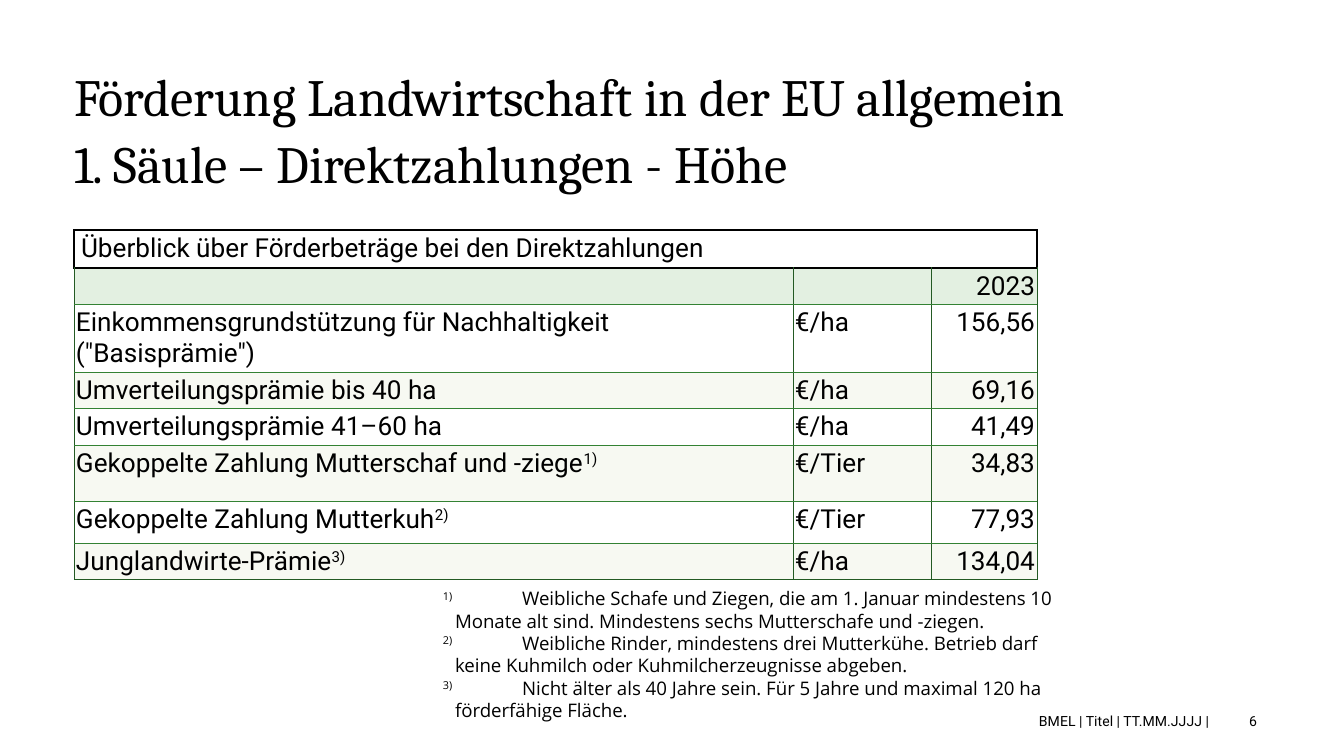
import lxml.etree
import pptx
import pptx.dml.color
import pptx.enum.text
import pptx.oxml.ns
import pptx.util

EMU_PER_PX = 914400 / 134.4
ALIGN = pptx.enum.text.PP_ALIGN
ANCHOR = pptx.enum.text.MSO_ANCHOR

BLACK, WHITE = "000000", "FFFFFF"
HEADER_FILL, BAND_FILL = "E3F0E1", "F7F9F2"
DARK_GREEN, GREEN = "235A23", "338233"

TITLE_LINES = [
    "Förderung Landwirtschaft in der EU allgemein",
    "1. Säule – Direktzahlungen - Höhe",
]
TABLE_HEADING = "Überblick über Förderbeträge bei den Direktzahlungen"
COLUMN_WIDTHS = [719, 138, 106]
HEADING_HEIGHT = 38
# label, footnote mark, unit, amount, row height
PAYMENTS = [
    ("", "", "", "2023", 36),
    ('Einkommensgrundstützung für Nachhaltigkeit ("Basisprämie")', "", "€/ha", "156,56", 67),
    ("Umverteilungsprämie bis 40 ha", "", "€/ha", "69,16", 36),
    ("Umverteilungsprämie 41–60 ha", "", "€/ha", "41,49", 37),
    ("Gekoppelte Zahlung Mutterschaf und -ziege", "1)", "€/Tier", "34,83", 56),
    ("Gekoppelte Zahlung Mutterkuh", "2)", "€/Tier", "77,93", 42),
    ("Junglandwirte-Prämie", "3)", "€/ha", "134,04", 36),
]
FOOTNOTES = [
    ("1)", "Weibliche Schafe und Ziegen, die am 1. Januar mindestens 10 Monate alt sind. "
           "Mindestens sechs Mutterschafe und -ziegen."),
    ("2)", "Weibliche Rinder, mindestens drei Mutterkühe. "
           "Betrieb darf keine Kuhmilch oder Kuhmilcherzeugnisse abgeben."),
    ("3)", "Nicht älter als 40 Jahre sein. Für 5 Jahre und maximal 120 ha förderfähige Fläche."),
]
FOOTER = "BMEL | Titel | TT.MM.JJJJ |"
PAGE_NUMBER = "6"


def px(length):
    return pptx.util.Emu(round(length * EMU_PER_PX))


def color(value):
    return pptx.dml.color.RGBColor.from_string(value)


def add_run(paragraph, text, font, size, superscript=False):
    run = paragraph.add_run()
    run.text = text
    run.font.name = font
    run.font.size = pptx.util.Pt(size)
    run.font.color.rgb = color(BLACK)
    if superscript:
        run.font._element.set("baseline", "30000")


def set_margins(target, horizontal, top, bottom):
    target.margin_left = target.margin_right = px(horizontal)
    target.margin_top = px(top)
    target.margin_bottom = px(bottom)


def add_text_frame(slide, box, margins=(13, 7, 7), anchor=ANCHOR.TOP):
    frame = slide.shapes.add_textbox(*map(px, box)).text_frame
    frame.word_wrap = True
    frame.vertical_anchor = anchor
    set_margins(frame, *margins)
    return frame


def paragraphs(frame, count):
    """Return count paragraphs, starting with the one every frame has."""
    return [frame.paragraphs[0]] + [frame.add_paragraph() for _ in range(count - 1)]


def style_cell(cell, fill, margins, borders):
    """Borders maps a side (L, R, T, B) to its colour and width in points."""
    properties = cell._tc.get_or_add_tcPr()
    for side in "LRTB":
        line_color, width = borders[side]
        line = lxml.etree.SubElement(
            properties, pptx.oxml.ns.qn("a:ln" + side), w=str(pptx.util.Pt(width)))
        solid = lxml.etree.SubElement(line, pptx.oxml.ns.qn("a:solidFill"))
        lxml.etree.SubElement(solid, pptx.oxml.ns.qn("a:srgbClr"), val=line_color)
    cell.fill.solid()
    cell.fill.fore_color.rgb = color(fill)
    set_margins(cell, *margins)


def add_title(slide):
    frame = add_text_frame(slide, (74, 71, 1196, 117), margins=(0, 0, 0))
    for paragraph, text in zip(paragraphs(frame, len(TITLE_LINES)), TITLE_LINES):
        paragraph.line_spacing = pptx.util.Pt(30)
        paragraph.space_after = pptx.util.Pt(6)
        add_run(paragraph, text, "Cambria", 28)


def add_payment_table(slide):
    heights = [HEADING_HEIGHT] + [payment[-1] for payment in PAYMENTS]
    table = slide.shapes.add_table(
        len(heights), len(COLUMN_WIDTHS),
        px(74), px(230), px(sum(COLUMN_WIDTHS)), px(sum(heights))).table
    table.first_row = table.horz_banding = False
    for column, width in zip(table.columns, COLUMN_WIDTHS):
        column.width = px(width)
    for row, height in zip(table.rows, heights):
        row.height = px(height)

    frame_line = (BLACK, 1)
    for cell in table.rows[0].cells:
        style_cell(cell, WHITE, (7, 3, 3), dict.fromkeys("LRTB", frame_line))
    heading = table.cell(0, 0)
    heading.merge(table.cell(0, len(COLUMN_WIDTHS) - 1))
    heading.vertical_anchor = ANCHOR.MIDDLE
    add_run(heading.text_frame.paragraphs[0], TABLE_HEADING, "Roboto", 14)

    last = len(PAYMENTS)
    for number, (label, mark, unit, amount, _) in enumerate(PAYMENTS, start=1):
        fill = HEADER_FILL if number == 1 else (WHITE, BAND_FILL)[number % 2]
        borders = {
            "L": (DARK_GREEN, 0.38),
            "R": (DARK_GREEN, 0.38),
            "T": frame_line if number == 1 else (GREEN, 0.38),
            "B": (DARK_GREEN if number == last else GREEN, 0.38),
        }
        for column, text in enumerate((label, unit, amount)):
            cell = table.cell(number, column)
            style_cell(cell, fill, (2, 3, 2), borders)
            paragraph = cell.text_frame.paragraphs[0]
            paragraph.alignment = ALIGN.RIGHT if column == 2 else ALIGN.LEFT
            if text:
                add_run(paragraph, text, "Roboto", 14)
            else:
                lxml.etree.SubElement(
                    paragraph._p, pptx.oxml.ns.qn("a:endParaRPr"), sz="1400")
        if mark:
            add_run(table.cell(number, 0).text_frame.paragraphs[0], mark, "Roboto", 14, True)


def add_footnotes(slide):
    frame = add_text_frame(slide, (429, 580, 672, 126))
    for paragraph, (mark, text) in zip(paragraphs(frame, len(FOOTNOTES)), FOOTNOTES):
        properties = paragraph._p.get_or_add_pPr()
        properties.set("marL", str(px(13)))
        properties.set("indent", str(px(-12)))
        add_run(paragraph, mark, "Open Sans", 10, True)
        # The full-size space passes the hanging indent, so the tab reaches the next stop.
        add_run(paragraph, " \t" + text, "Open Sans", 10)


def add_footer(slide):
    for text, left, width, alignment in (
        (FOOTER, 408, 814, ALIGN.RIGHT),
        (PAGE_NUMBER, 1236, 63, ALIGN.LEFT),
    ):
        frame = add_text_frame(slide, (left, 712, width, 17), anchor=ANCHOR.MIDDLE)
        frame.paragraphs[0].alignment = alignment
        add_run(frame.paragraphs[0], text, "Roboto", 7.5)


def main():
    presentation = pptx.Presentation()
    presentation.slide_width, presentation.slide_height = px(1344), px(756)
    slide = presentation.slides.add_slide(presentation.slide_layouts[6])
    add_title(slide)
    add_payment_table(slide)
    add_footnotes(slide)
    add_footer(slide)
    presentation.save("out.pptx")


if __name__ == "__main__":
    main()
